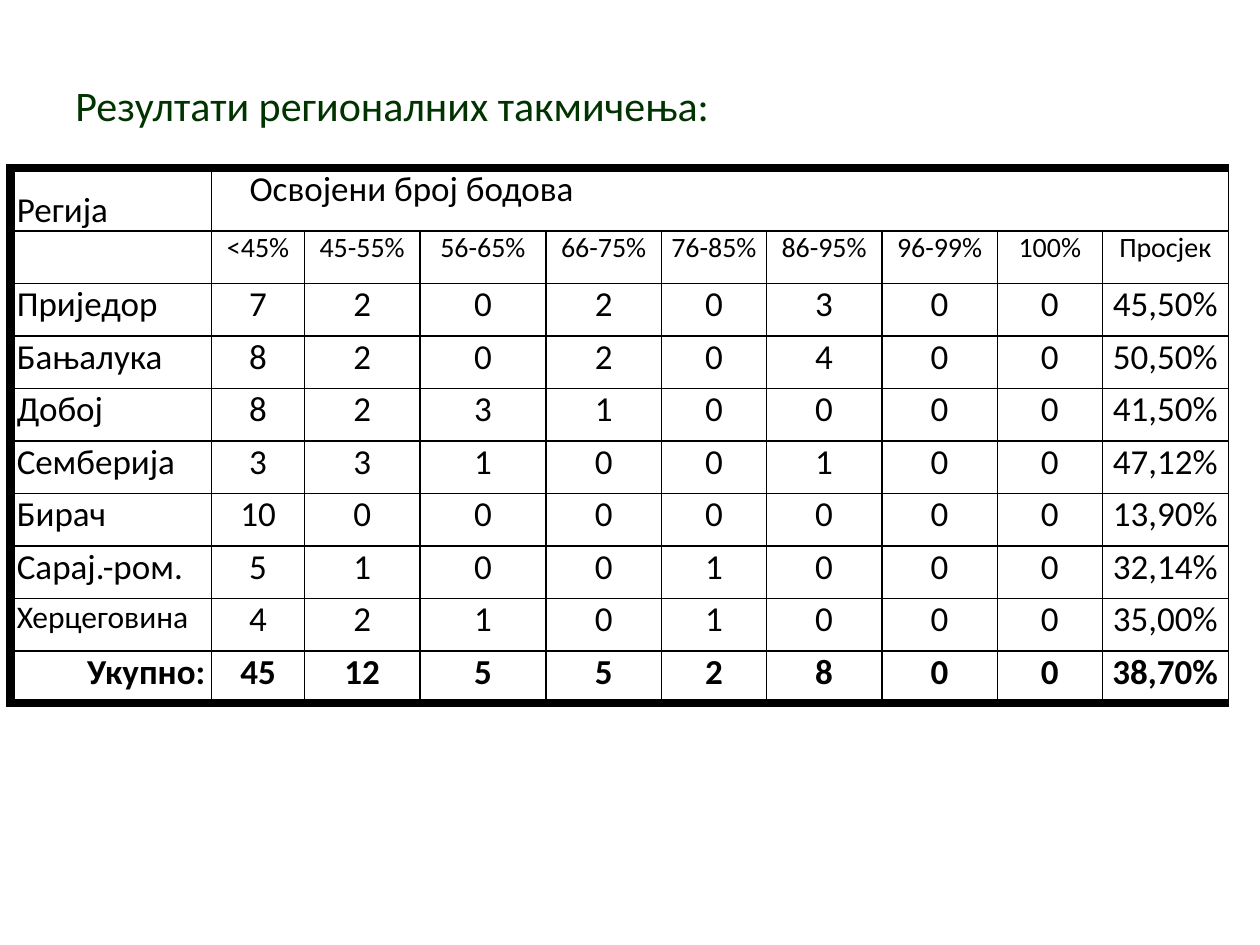
from pptx import Presentation
from pptx.dml.color import RGBColor
from pptx.enum.text import MSO_ANCHOR, MSO_AUTO_SIZE, PP_ALIGN
from pptx.oxml import parse_xml
from pptx.oxml.ns import nsdecls
from pptx.util import Pt


def style_font(paragraph, size, color, bold=False):
    for run in paragraph.runs:
        run.font.name = "Calibri"
        run.font.size = Pt(size)
        run.font.bold = bold
        run.font.color.rgb = RGBColor.from_string(color)


def add_border(cell, side, width):
    cell._tc.get_or_add_tcPr().append(parse_xml(
        f'<a:ln{side} {nsdecls("a")} w="{Pt(width)}"><a:solidFill>'
        f'<a:srgbClr val="000000"/></a:solidFill></a:ln{side}>'))


rows = [
    ["Регија", "Освојени број бодова"] + [""] * 8,
    ["", "<45%", "45-55%", "56-65%", "66-75%", "76-85%", "86-95%", "96-99%", "100%", "Просјек"],
    ["Приједор", "7", "2", "0", "2", "0", "3", "0", "0", "45,50%"],
    ["Бањалука", "8", "2", "0", "2", "0", "4", "0", "0", "50,50%"],
    ["Добој", "8", "2", "3", "1", "0", "0", "0", "0", "41,50%"],
    ["Семберија", "3", "3", "1", "0", "0", "1", "0", "0", "47,12%"],
    ["Бирач", "10", "0", "0", "0", "0", "0", "0", "0", "13,90%"],
    ["Сарај.-ром.", "5", "1", "0", "0", "1", "0", "0", "0", "32,14%"],
    ["Херцеговина", "4", "2", "1", "0", "1", "0", "0", "0", "35,00%"],
    ["Укупно:", "45", "12", "5", "5", "2", "8", "0", "0", "38,70%"],
]
column_widths = [115, 53, 66, 72, 66, 60, 66, 66, 60, 72]
row_height = 30
last_row = len(rows) - 1
last_column = len(column_widths) - 1

presentation = Presentation()
presentation.slide_width = Pt(720)
presentation.slide_height = Pt(540)
slide = presentation.slides.add_slide(presentation.slide_layouts[6])

title = slide.shapes.add_textbox(Pt(36), Pt(42), Pt(600), Pt(36))
title.text_frame.word_wrap = True
title.text_frame.auto_size = MSO_AUTO_SIZE.SHAPE_TO_FIT_TEXT
title.text_frame.text = "Резултати регионалних такмичења:"
style_font(title.text_frame.paragraphs[0], 24, "003300")

table = slide.shapes.add_table(
    len(rows), len(column_widths), Pt(6), Pt(96),
    Pt(sum(column_widths)), Pt(row_height * len(rows))).table
table.first_row = False
table.horz_banding = False
for column, width in zip(table.columns, column_widths):
    column.width = Pt(width)

for row_index, values in enumerate(rows):
    table.rows[row_index].height = Pt(row_height)
    for column_index, value in enumerate(values):
        cell = table.cell(row_index, column_index)
        add_border(cell, "L", 5.25 if column_index == 0 else 1)
        add_border(cell, "R", 1)
        add_border(cell, "T", 5.25 if row_index == 0 else 1)
        add_border(cell, "B", 5.25 if row_index == last_row else 1)
        cell.fill.background()
        if not value:
            continue
        cell.margin_left = cell.margin_right = Pt(3.6)
        cell.margin_top = cell.margin_bottom = Pt(0)
        cell.text_frame.text = value
        paragraph = cell.text_frame.paragraphs[0]
        if row_index == 1 or column_index in (0, last_column):
            properties = paragraph._p.get_or_add_pPr()
            properties.set("marL", str(Pt(35.4)))
            properties.set("indent", str(Pt(-35.4)))
        if column_index > 0 and row_index > 0:
            paragraph.alignment = PP_ALIGN.CENTER
        size = 16 if row_index == 1 else 18 if value == "Херцеговина" else 20
        style_font(paragraph, size, "000000", row_index == last_row)

region_heading = table.cell(0, 0)
region_heading.vertical_anchor = MSO_ANCHOR.MIDDLE
region_heading.text_frame.paragraphs[0].line_spacing = 1.5

points_heading = table.cell(0, 1)
points_heading.merge(table.cell(0, last_column))
properties = points_heading.text_frame.paragraphs[0]._p.get_or_add_pPr()
properties.set("marL", str(Pt(36)))
properties.set("indent", str(Pt(-18)))

table.cell(last_row, 0).text_frame.paragraphs[0].alignment = PP_ALIGN.RIGHT

presentation.save("out.pptx")
